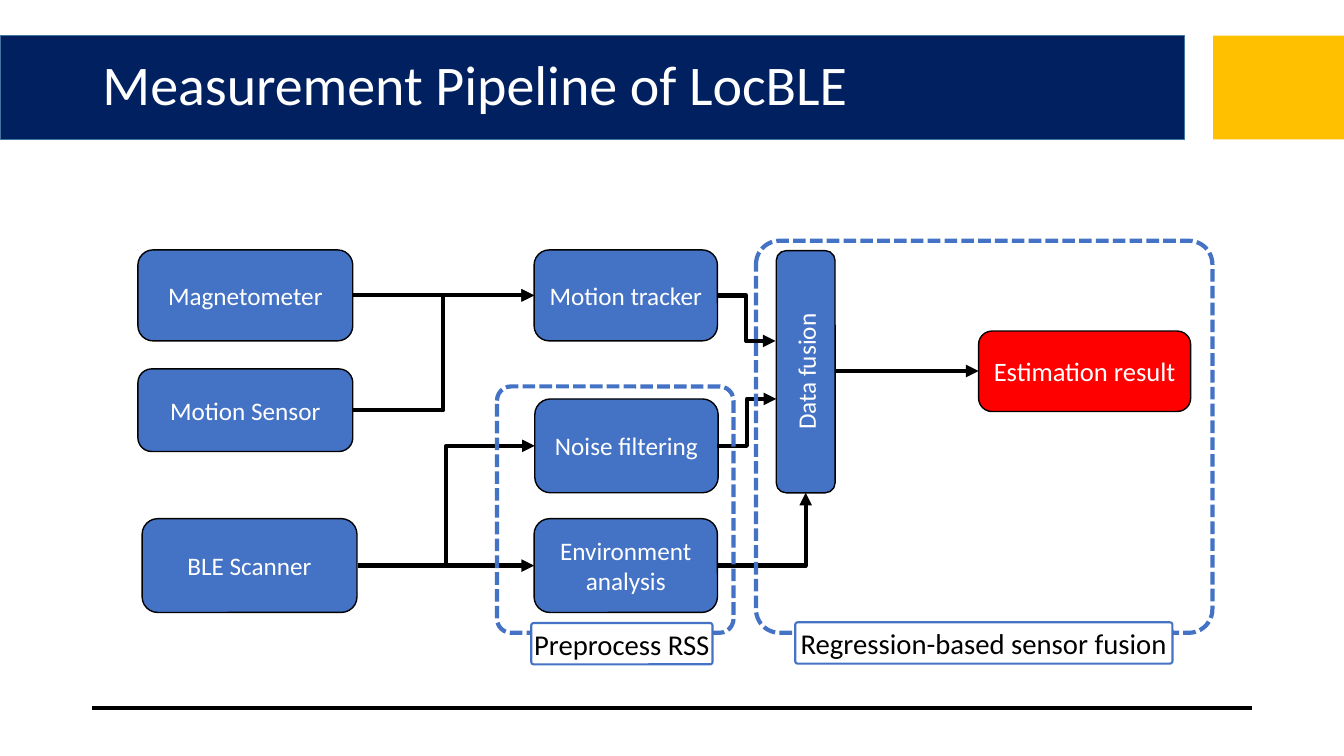
import pptx
import pptx.dml.color
import pptx.enum.dml
import pptx.enum.shapes
import pptx.enum.text
import pptx.oxml.ns
import pptx.util
from lxml import etree

Pt = pptx.util.Pt
qn = pptx.oxml.ns.qn
SHAPE = pptx.enum.shapes.MSO_SHAPE
CONNECTOR = pptx.enum.shapes.MSO_CONNECTOR
ANCHOR = pptx.enum.text.MSO_ANCHOR
ALIGN = pptx.enum.text.PP_ALIGN

COLORS = {
    "navy": "002060", "steel": "43739E", "gold": "FFC000", "blue": "4472C4",
    "red": "FF0000", "black": "000000", "white": "FFFFFF",
}


def rgb(name):
    return pptx.dml.color.RGBColor.from_string(COLORS[name])


def set_font(p, size, color):
    p.font.name = "Calibri"
    p.font.size = Pt(size)
    p.font.color.rgb = rgb(color)


def add_box(shapes, kind, at, fill=None, line=None, width=1.0):
    sp = shapes.add_shape(kind, *map(Pt, at))
    sp.shadow.inherit = False
    if fill:
        sp.fill.solid()
        sp.fill.fore_color.rgb = rgb(fill)
    else:
        sp.fill.background()
    if line:
        sp.line.color.rgb = rgb(line)
        sp.line.width = Pt(width)
    else:
        sp.line.fill.background()
    return sp


def write(sp, text, size, color):
    tf = sp.text_frame
    tf.margin_left = tf.margin_right = tf.margin_top = tf.margin_bottom = 0
    tf.vertical_anchor = ANCHOR.MIDDLE
    tf.word_wrap = True
    p = tf.paragraphs[0]
    p.text = text
    p.alignment = ALIGN.CENTER
    set_font(p, size, color)


def add_stage(s, text, at, fill="blue", size=18, rotation=0):
    sp = add_box(s.shapes, SHAPE.ROUNDED_RECTANGLE, at, fill, "black")
    sp.rotation = rotation
    write(sp, text, size, "white")


def add_frame(s, text, frame_at, label_at):
    """Dashed frame grouped with the caption on its lower edge."""
    shapes = s.shapes.add_group_shape().shapes
    frame = add_box(shapes, SHAPE.ROUNDED_RECTANGLE, frame_at, None, "blue", 3)
    frame.line.dash_style = pptx.enum.dml.MSO_LINE.SQUARE_DOT
    label = add_box(shapes, SHAPE.ROUNDED_RECTANGLE, label_at, "white", "blue", 1.5)
    write(label, text, 20.5, "black")
    for sp in (frame, label):
        sp.adjustments[0] = 0.06


def add_line(s, start, end, kind=CONNECTOR.STRAIGHT):
    c = s.shapes.add_connector(kind, *map(Pt, start + end))
    c.line.color.rgb = rgb("black")
    c.line.width = Pt(3)
    etree.SubElement(c._element.spPr, qn("a:effectLst"))
    return c


def add_arrow(s, start, end, kind=CONNECTOR.STRAIGHT, single_bend=False):
    c = add_line(s, start, end, kind)
    etree.SubElement(c.line._get_or_add_ln(), qn("a:tailEnd"), type="triangle")
    if single_bend:
        c._element.spPr.find(qn("a:prstGeom")).set("prst", "bentConnector2")


def add_header(s, text):
    add_box(s.shapes, SHAPE.RECTANGLE, (0, 25.5, 846, 74), "navy", "steel")
    add_box(s.shapes, SHAPE.RECTANGLE, (866.5, 25.5, 93.5, 74), "gold")
    add_line(s, (66, 506), (894, 506))
    title = s.shapes.title
    s.shapes._spTree.append(title._element)
    title.left, title.top, title.width, title.height = map(Pt, (66, 25.5, 828, 74))
    tf = title.text_frame
    tf.auto_size = pptx.enum.text.MSO_AUTO_SIZE.NONE
    tf.vertical_anchor = ANCHOR.MIDDLE
    p = tf.paragraphs[0]
    p.text = text
    p.alignment = ALIGN.LEFT
    p.line_spacing = 0.9
    set_font(p, 40, "white")


def main():
    prs = pptx.Presentation()
    prs.slide_width, prs.slide_height = Pt(960), Pt(540)
    s = prs.slides.add_slide(prs.slide_layouts[5])
    add_header(s, "Measurement Pipeline of LocBLE")

    add_stage(s, "Estimation result", (699, 236.5, 151.5, 57.5), "red", 19)
    add_stage(s, "Data fusion", (489, 244.5, 173, 42), rotation=270)
    for text, at in (
        ("Noise filtering", (382, 285, 131, 67)),
        ("Environment analysis", (381.5, 370.5, 131, 67)),
        ("Motion tracker", (381.5, 178.5, 131, 65)),
        ("Motion Sensor", (98.5, 263.5, 153.5, 59)),
        ("BLE Scanner", (101.5, 370.5, 153.5, 67)),
        ("Magnetometer", (98.5, 178.5, 153.5, 65)),
    ):
        add_stage(s, text, at)

    for start, end in (
        ((255.5, 404), (381.5, 404)),
        ((252, 211), (381.5, 211)),
        ((596.5, 265), (699, 265)),
    ):
        add_arrow(s, start, end)
    for start, end in (
        ((255.5, 404), (382, 318.5)),
        ((252, 293), (381.5, 211)),
        ((512.5, 318.5), (554.5, 285)),
        ((512, 211), (554, 243.5)),
    ):
        add_arrow(s, start, end, CONNECTOR.ELBOW)
    add_arrow(s, (512, 404), (575.5, 352), CONNECTOR.ELBOW, single_bend=True)

    add_frame(s, "Regression-based sensor fusion",
              (540, 172, 326, 280), (568, 444.5, 269.5, 29.5))
    add_frame(s, "Preprocess RSS",
              (355, 276, 169, 176), (379.5, 445, 129.5, 29.5))
    prs.save("out.pptx")


if __name__ == "__main__":
    main()
